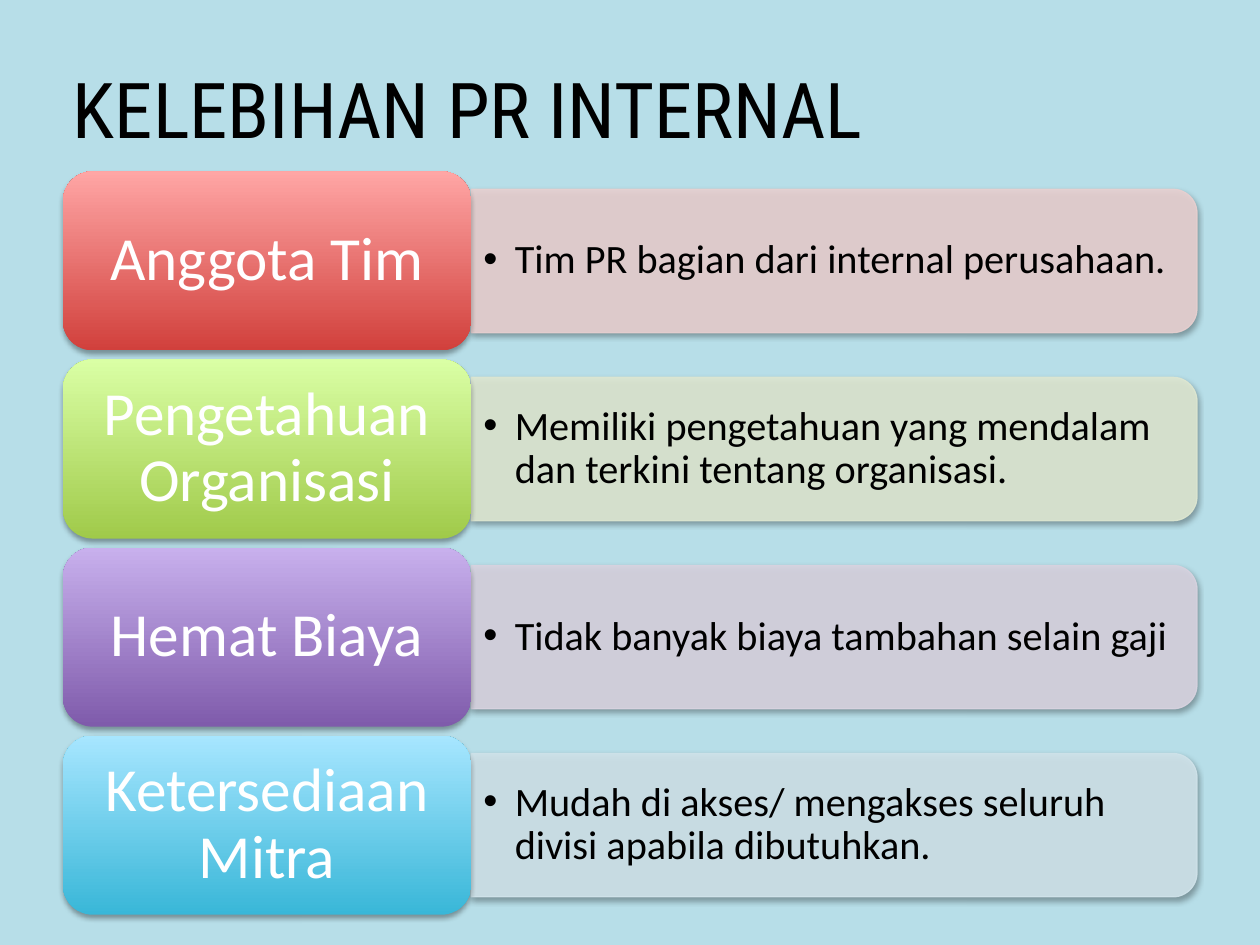
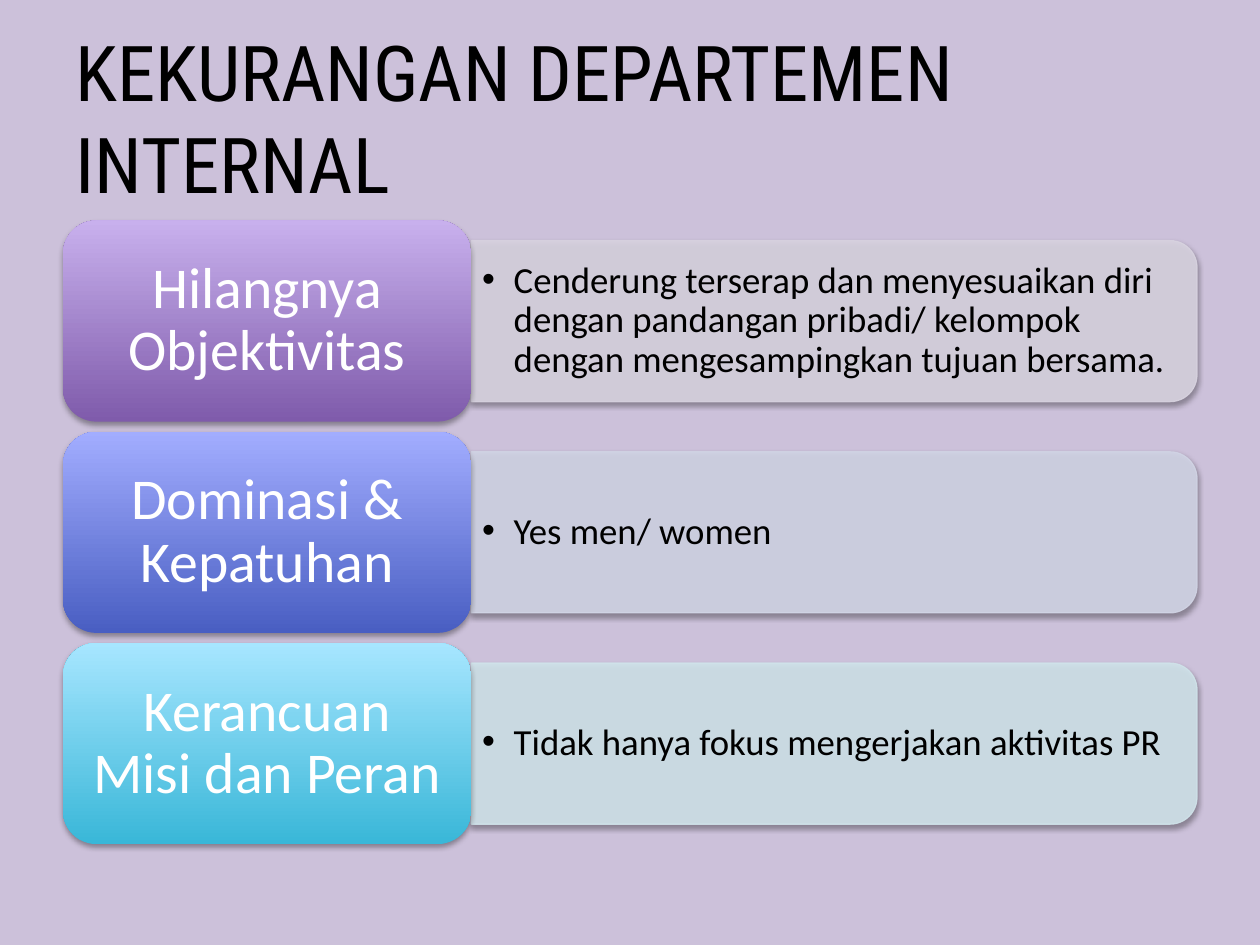
import pptx
import pptx.util
import pptx.dml.color
import pptx.enum.shapes
import pptx.enum.text
from dataclasses import dataclass
from lxml import etree
from pptx.oxml.ns import qn

Inches = pptx.util.Inches
Pt = pptx.util.Pt
SHAPES = pptx.enum.shapes.MSO_SHAPE
ALIGN = pptx.enum.text.PP_ALIGN

SLIDES = [
    {
        "background": "B7DEE8",
        "title": "KELEBIHAN PR INTERNAL",
        "title_at": (0.48, 0.23),
        "rows_span": (1.36, 7.26),
        "label_size": 35,
        "detail_size": 23,
        "rows": [
            ("Anggota Tim", "Tim PR bagian dari internal perusahaan.", "red"),
            ("Pengetahuan Organisasi",
             "Memiliki pengetahuan yang mendalam dan terkini tentang organisasi.", "green"),
            ("Hemat Biaya", "Tidak banyak biaya tambahan selain gaji", "purple"),
            ("Ketersediaan Mitra",
             "Mudah di akses/ mengakses seluruh divisi apabila dibutuhkan.", "aqua"),
        ],
    },
    {
        "background": "CCC1DA",
        "title": "KEKURANGAN DEPARTEMEN INTERNAL",
        "title_at": (0.5, 0.3),
        "rows_span": (1.75, 6.7),
        "label_size": 33,
        "detail_size": 21,
        "rows": [
            ("Hilangnya Objektivitas",
             "Cenderung terserap dan menyesuaikan diri dengan pandangan pribadi/ kelompok "
             "dengan mengesampingkan tujuan bersama.", "purple"),
            ("Dominasi & Kepatuhan", "Yes men/ women", "blue"),
            ("Kerancuan Misi dan Peran", "Tidak hanya fokus mengerjakan aktivitas PR", "aqua"),
        ],
    },
]


@dataclass(frozen=True)
class Tone:
    dark: str
    light: str
    panel: str


class Theme:
    title_font = "Roboto Condensed"
    body_font = "Calibri"
    title_size = 44
    ink = "000000"
    label_ink = "FFFFFF"
    tones = {
        "red": Tone("D1403C", "FFA6A5", "E8D0D0"),
        "green": Tone("A0CA4A", "DAFFA5", "DEE7D1"),
        "purple": Tone("7F5BAB", "C8B0ED", "D8D3E0"),
        "blue": Tone("495EC2", "A2ADFF", "D1D4E5"),
        "aqua": Tone("39B7D8", "A7E6FF", "D0E3EA"),
    }


LABEL_LEFT, LABEL_WIDTH, PANEL_WIDTH = 0.5, 3.24, 5.76
TITLE_WIDTH, TITLE_HEIGHT = 9, 1.25
GAP_SHARE = 0.05
PANEL_SHARE = 0.8
CORNER_INSET = 0.05


def rgb(color):
    return pptx.dml.color.RGBColor.from_string(color)


def set_alpha(fill_parent, percent):
    color = fill_parent.find(qn("a:solidFill"))[0]
    etree.SubElement(color, qn("a:alpha"), val=str(percent * 1000))


def add_shadow(shape):
    shape.shadow.inherit = False
    effects = shape._element.spPr.find(qn("a:effectLst"))
    outer = etree.SubElement(effects, qn("a:outerShdw"), blurRad=str(Pt(3.1)),
                             dist=str(Pt(1.8)), dir="5400000", rotWithShape="0")
    black = etree.SubElement(outer, qn("a:srgbClr"), val="000000")
    etree.SubElement(black, qn("a:alpha"), val="35000")


def add_text(slide, box, words, font, size, color, side=0.1, align=ALIGN.LEFT, spacing=None):
    text = slide.shapes.add_textbox(*map(Inches, box))
    frame = text.text_frame
    frame.word_wrap = True
    frame.vertical_anchor = pptx.enum.text.MSO_ANCHOR.MIDDLE
    frame.margin_left = frame.margin_right = Inches(side)
    frame.margin_top = frame.margin_bottom = Inches(side / 2)
    paragraph = frame.paragraphs[0]
    paragraph.alignment = align
    paragraph.line_spacing = spacing
    run = paragraph.add_run()
    run.text = words
    run.font.name = font
    run.font.size = Pt(size)
    run.font.color.rgb = rgb(color)
    return paragraph


def add_bullet(paragraph):
    properties = paragraph._p.get_or_add_pPr()
    properties.set("marL", str(Inches(0.25)))
    properties.set("indent", str(-Inches(0.25)))
    etree.SubElement(properties, qn("a:buFont"), typeface="Arial")
    etree.SubElement(properties, qn("a:buChar"), char="•")


def add_panel(slide, left, top, height, tone):
    center_x, center_y = left + PANEL_WIDTH / 2, top + height / 2
    panel = slide.shapes.add_shape(
        SHAPES.ROUND_2_SAME_RECTANGLE,
        Inches(center_x - height / 2), Inches(center_y - PANEL_WIDTH / 2),
        Inches(height), Inches(PANEL_WIDTH))
    panel.rotation = 90
    panel.fill.solid()
    panel.fill.fore_color.rgb = rgb(tone.panel)
    panel.line.color.rgb = rgb(tone.panel)
    panel.line.width = Pt(0.75)
    properties = panel._element.spPr
    set_alpha(properties, 90)
    set_alpha(properties.find(qn("a:ln")), 90)
    add_shadow(panel)


def add_label(slide, top, height, tone):
    label = slide.shapes.add_shape(
        SHAPES.ROUNDED_RECTANGLE, Inches(LABEL_LEFT), Inches(top),
        Inches(LABEL_WIDTH), Inches(height))
    label.fill.gradient()
    label.fill.gradient_angle = 90
    for stop, color in zip(label.fill.gradient_stops, (tone.dark, tone.light)):
        stop.color.rgb = rgb(color)
    for stop, position in zip(label.fill.gradient_stops, (0, 1)):
        stop.position = position
    label.line.fill.background()
    add_shadow(label)


def add_row(slide, content, top, height, row):
    label, detail, tone_name = row
    tone = Theme.tones[tone_name]
    panel_left = LABEL_LEFT + LABEL_WIDTH
    panel_height = height * PANEL_SHARE
    panel_top = top + (height - panel_height) / 2
    panel_inset = panel_height * CORNER_INSET
    label_inset = height * CORNER_INSET
    label_size, detail_size = content["label_size"], content["detail_size"]

    add_panel(slide, panel_left, panel_top, panel_height, tone)
    detail_box = (panel_left, panel_top + panel_inset,
                  PANEL_WIDTH - panel_inset, panel_height - 2 * panel_inset)
    add_bullet(add_text(slide, detail_box, detail, Theme.body_font, detail_size, Theme.ink,
                        side=detail_size * 0.3 / 72, spacing=0.9))

    add_label(slide, top, height, tone)
    label_box = (LABEL_LEFT + label_inset, top + label_inset,
                 LABEL_WIDTH - 2 * label_inset, height - 2 * label_inset)
    add_text(slide, label_box, label, Theme.body_font, label_size, Theme.label_ink,
             side=label_size * 0.3 / 72, align=ALIGN.CENTER, spacing=0.9)


def add_slide(deck, content):
    slide = deck.slides.add_slide(deck.slide_layouts[6])
    slide.background.fill.solid()
    slide.background.fill.fore_color.rgb = rgb(content["background"])
    add_text(slide, (*content["title_at"], TITLE_WIDTH, TITLE_HEIGHT), content["title"],
             Theme.title_font, Theme.title_size, Theme.ink)
    first, last = content["rows_span"]
    count = len(content["rows"])
    height = (last - first) / (count + GAP_SHARE * (count - 1))
    for index, row in enumerate(content["rows"]):
        add_row(slide, content, first + index * height * (1 + GAP_SHARE), height, row)


def main():
    deck = pptx.Presentation()
    deck.slide_width, deck.slide_height = Inches(10), Inches(7.5)
    for content in SLIDES:
        add_slide(deck, content)
    deck.save("out.pptx")


if __name__ == "__main__":
    main()
